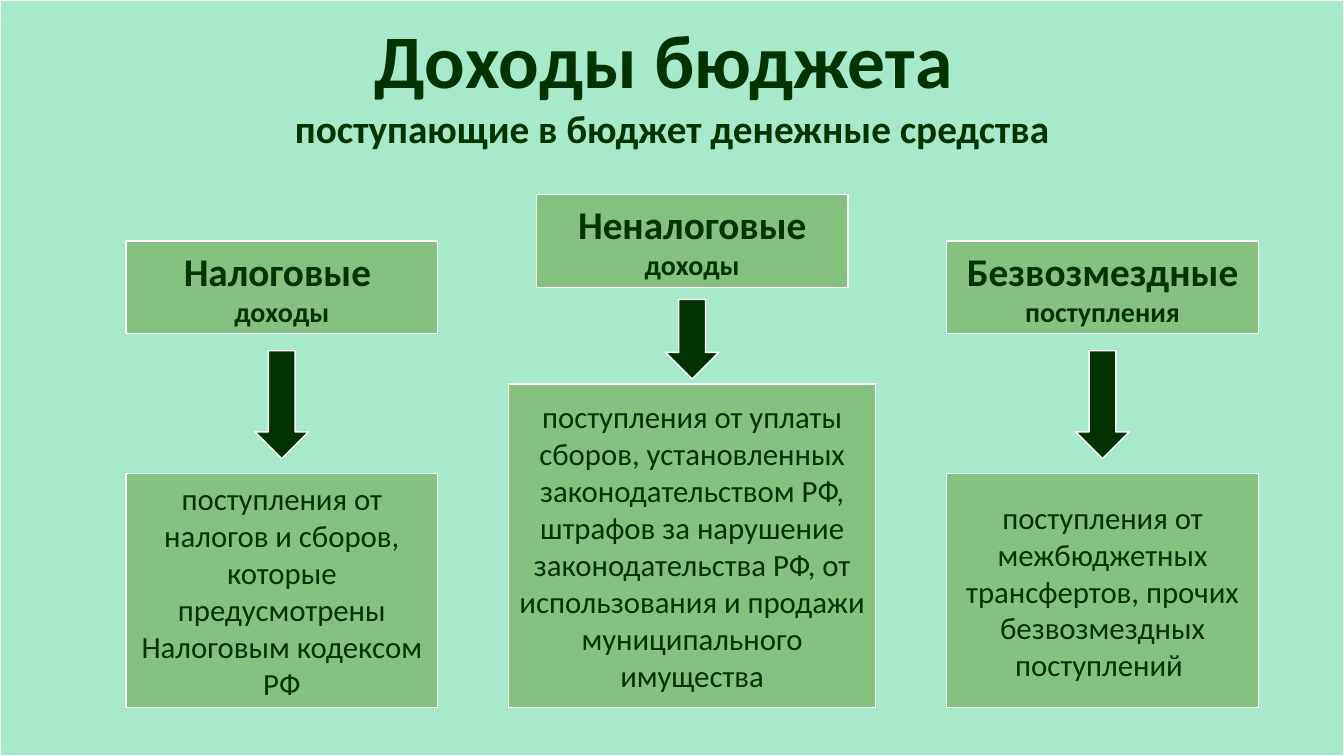
from dataclasses import dataclass

from pptx import Presentation
from pptx.dml.color import RGBColor
from pptx.enum.shapes import MSO_SHAPE as Shape
from pptx.enum.text import MSO_ANCHOR as Anchor, MSO_AUTO_SIZE as AutoSize, PP_ALIGN as Align
from pptx.util import Pt

PX = 9144
SLIDE_WIDTH, SLIDE_HEIGHT = 1333, 750
TITLE_ONLY = 5
FONT = "Calibri"
MINT = RGBColor(0xA7, 0xEA, 0xCB)
GREEN = RGBColor(0x85, 0xC2, 0x7F)
DARK_GREEN = RGBColor(0x00, 0x33, 0x00)
WHITE = RGBColor(0xFF, 0xFF, 0xFF)

COLUMN_LEFT, COLUMN_STEP, COLUMN_WIDTH = 125, 407, 309
COLUMN_BOTTOM = 702
HEADING_HEIGHT, ARROW_WIDTH = 92, 53


@dataclass
class Income:
    """One kind of budget income and the vertical layout of its column."""
    heading: list
    description: str
    top: int = 239
    arrow_top: int = 348
    arrow_height: int = 107
    body_top: int = 470
    body_width: int = COLUMN_WIDTH


INCOMES = [
    Income([[("Налоговые ", 28)], [("доходы", 20)]],
           "поступления от налогов и сборов, которые предусмотрены Налоговым кодексом РФ"),
    Income([[("Неналоговые ", 28), ("доходы", 20)]],
           "поступления от уплаты сборов, установленных законодательством РФ, "
           "штрафов за нарушение законодательства РФ, от использования и продажи "
           "муниципального имущества",
           top=193, arrow_top=297, arrow_height=79, body_top=381, body_width=364),
    Income([[("Безвозмездные ", 28), ("поступления", 20)]],
           "поступления от межбюджетных трансфертов, прочих безвозмездных поступлений "),
]


def write_text(shape, paragraphs, bold=False, anchor=Anchor.MIDDLE, auto_size=AutoSize.NONE):
    """Fill a shape with centred paragraphs, each a list of (text, size) runs."""
    frame = shape.text_frame
    frame.word_wrap = True
    frame.auto_size = auto_size
    frame.vertical_anchor = anchor
    for index, runs in enumerate(paragraphs):
        paragraph = frame.add_paragraph() if index else frame.paragraphs[0]
        paragraph.alignment = Align.CENTER
        for text, size in runs:
            run = paragraph.add_run()
            run.text = text
            run.font.name = FONT
            run.font.size = Pt(size)
            run.font.bold = bold
            run.font.color.rgb = DARK_GREEN


def add_box(slide, kind, left, top, width, height, color):
    """Add a filled preset shape with a thin white outline."""
    box = [round(length * PX) for length in (left, top, width, height)]
    shape = slide.shapes.add_shape(kind, *box)
    shape.shadow.inherit = False
    shape.fill.solid()
    shape.fill.fore_color.rgb = color
    shape.line.color.rgb = WHITE
    shape.line.width = Pt(1)
    return shape


def add_header(slide, left, top, width, height):
    """Place the title and its subtitle in the given box."""
    title = slide.shapes.title
    title.left, title.top = left * PX, top * PX
    title.width, title.height = width * PX, height * PX
    write_text(title, [[("Доходы бюджета ", 54)],
                       [("поступающие в бюджет денежные средства", 28)]],
               bold=True, anchor=Anchor.TOP, auto_size=AutoSize.SHAPE_TO_FIT_TEXT)


def add_income_column(slide, income, left, width, bottom):
    """Stack a heading, a down arrow and a description around one centre line."""
    center = left + width / 2
    heading = add_box(slide, Shape.RECTANGLE, left, income.top, width, HEADING_HEIGHT, GREEN)
    write_text(heading, income.heading, bold=True)
    add_box(slide, Shape.DOWN_ARROW, center - ARROW_WIDTH / 2, income.arrow_top,
            ARROW_WIDTH, income.arrow_height, DARK_GREEN)
    body = add_box(slide, Shape.RECTANGLE, center - income.body_width / 2, income.body_top,
                   income.body_width, bottom - income.body_top, GREEN)
    write_text(body, [[(income.description, 22)]])


def build_income_slide(presentation):
    """Build the slide with a header and one column per kind of income."""
    slide = presentation.slides.add_slide(presentation.slide_layouts[TITLE_ONLY])
    backdrop = add_box(slide, Shape.RECTANGLE, 0, 0, SLIDE_WIDTH, SLIDE_HEIGHT, MINT)
    slide.shapes.title.element.addprevious(backdrop.element)
    add_header(slide, 0, 8, SLIDE_WIDTH, 148)
    for index, income in enumerate(INCOMES):
        add_income_column(slide, income, COLUMN_LEFT + index * COLUMN_STEP,
                          COLUMN_WIDTH, COLUMN_BOTTOM)


def main():
    """Create the presentation and save it."""
    presentation = Presentation()
    presentation.slide_width = SLIDE_WIDTH * PX
    presentation.slide_height = SLIDE_HEIGHT * PX
    build_income_slide(presentation)
    presentation.save("out.pptx")


if __name__ == "__main__":
    main()
